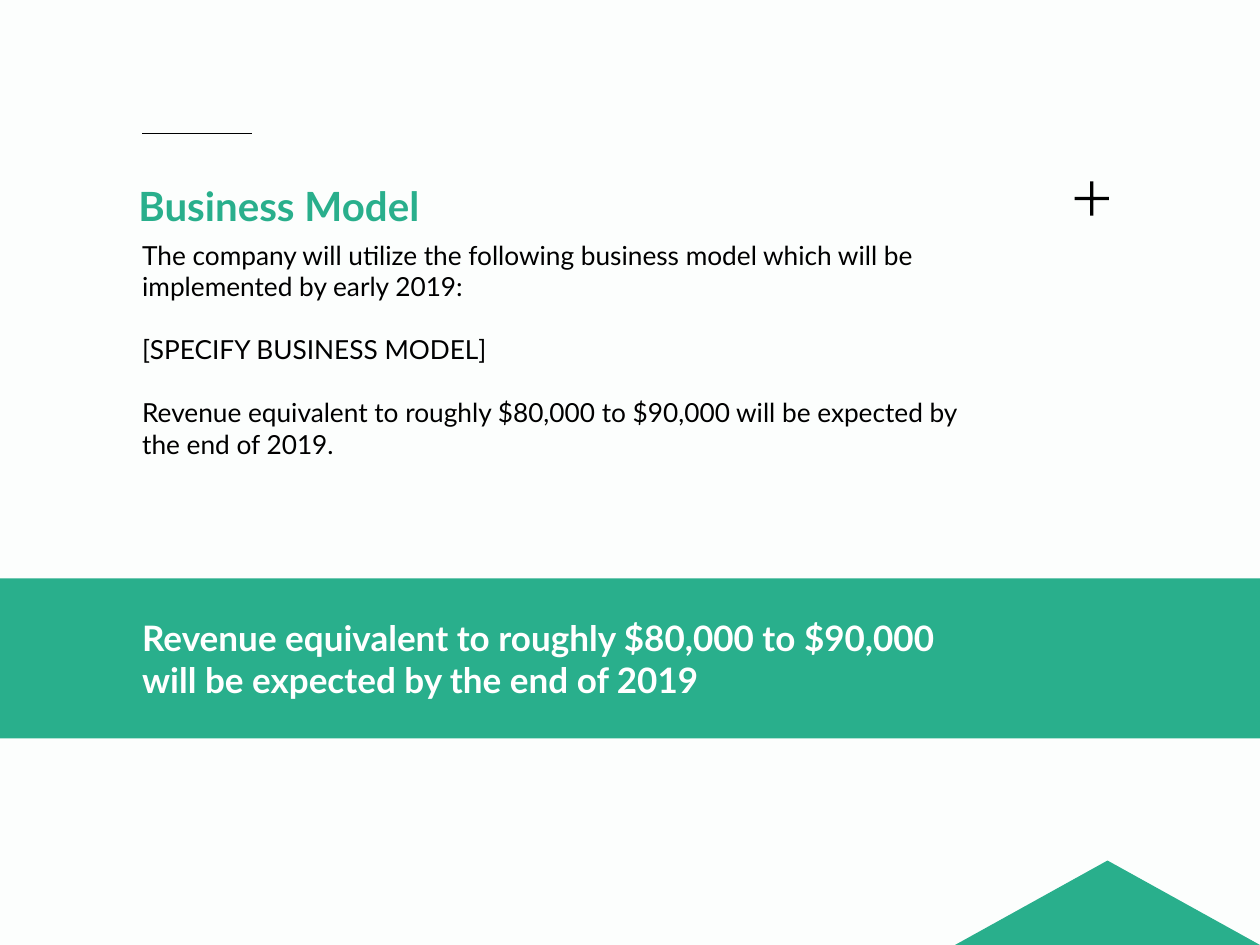
"""Build the Business Model slide."""
from lxml.etree import SubElement
from pptx import Presentation
from pptx.dml.color import RGBColor
from pptx.enum.shapes import MSO_CONNECTOR, MSO_SHAPE as Shape
from pptx.enum.text import MSO_ANCHOR, PP_ALIGN
from pptx.oxml.ns import qn
from pptx.util import Inches, Pt

COLORS = {"paper": "FCFEFD", "green": "29AF8C", "black": "000000", "white": "FFFFFF"}


def rgb(name):
    return RGBColor.from_string(COLORS[name])


def write(box, paragraphs, color, **font_format):
    frame = box.text_frame
    frame.word_wrap = True
    frame.vertical_anchor = MSO_ANCHOR.TOP
    for index, text in enumerate(paragraphs):
        paragraph = frame.paragraphs[0] if index == 0 else frame.add_paragraph()
        paragraph.alignment = PP_ALIGN.LEFT
        paragraph.space_before = Pt(18 if index else 0)
        run = paragraph.add_run()
        run.text = text
        run.font.color.rgb = rgb(color)
        for key, value in {"name": "Lato", **font_format}.items():
            setattr(run.font, key, value)


prs = Presentation()
prs.slide_width, prs.slide_height = Inches(10), Inches(7.5)
slide = prs.slides.add_slide(prs.slide_layouts[6])
slide.background.fill.solid()
slide.background.fill.fore_color.rgb = rgb("paper")
shapes = slide.shapes

details = shapes.add_textbox(Inches(1.03), Inches(1.85), Inches(6.75), Inches(1.87))
write(details, [
    "The company will utilize the following business model which will be implemented by early 2019:",
    "[SPECIFY BUSINESS MODEL]",
    "Revenue equivalent to roughly $80,000 to $90,000 will be expected by the end of 2019.",
], "black", size=Pt(15))

heading = shapes.add_textbox(Inches(1), Inches(1.39), Inches(2.8), Inches(0.49))
write(heading, ["Business Model"], "green", size=Pt(23), bold=True)

ornaments = [
    (Shape.RECTANGLE, (0, 4.59, 10, 1.27), "green", []),
    (Shape.MATH_PLUS, (8.48, 1.39, 0.37, 0.37), "black", [0.07]),
    (Shape.ISOSCELES_TRIANGLE, (7.58, 6.83, 2.42, 0.67), "green", []),
]
for preset, bounds, color, adjustments in ornaments:
    ornament = shapes.add_shape(preset, *map(Inches, bounds))
    ornament.shadow.inherit = False
    ornament.fill.solid()
    ornament.fill.fore_color.rgb = rgb(color)
    ornament.line.fill.background()
    for index, value in enumerate(adjustments):
        ornament.adjustments[index] = value

forecast = shapes.add_shape(Shape.RECTANGLE, Inches(1.03), Inches(4.84), Inches(6.97), Inches(0.77))
forecast.shadow.inherit = False
forecast.fill.background()
forecast.line.color.rgb = rgb("green")
forecast.line.width = Pt(0.75)
write(forecast, ["Revenue equivalent to roughly $80,000 to $90,000 will be expected by the end of 2019"],
      "white", size=Pt(20), bold=True)

accent = shapes.add_connector(MSO_CONNECTOR.STRAIGHT, Inches(1.13), Inches(1.06), Inches(2), Inches(1.06))
accent.line.color.rgb = rgb("black")
accent.line.width = Pt(1)
SubElement(accent._element.spPr, qn("a:effectLst"))

prs.save("out.pptx")
